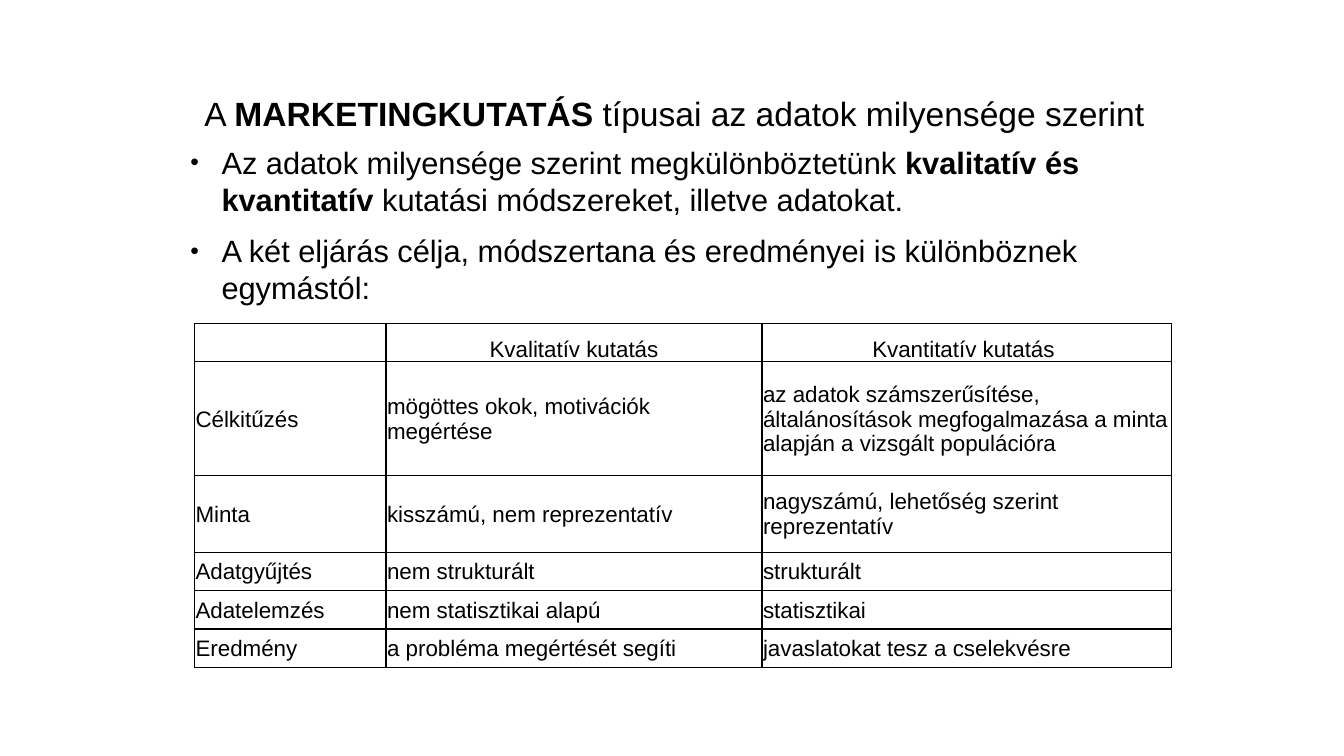
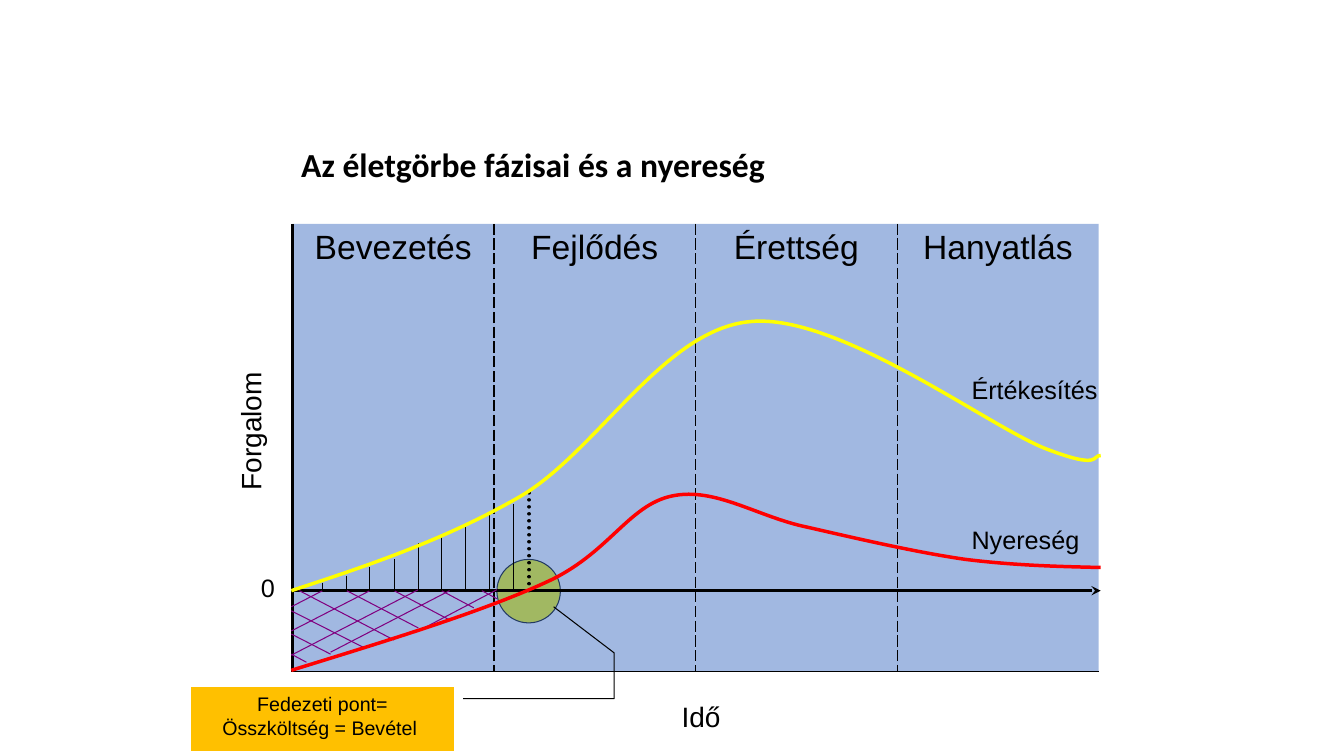
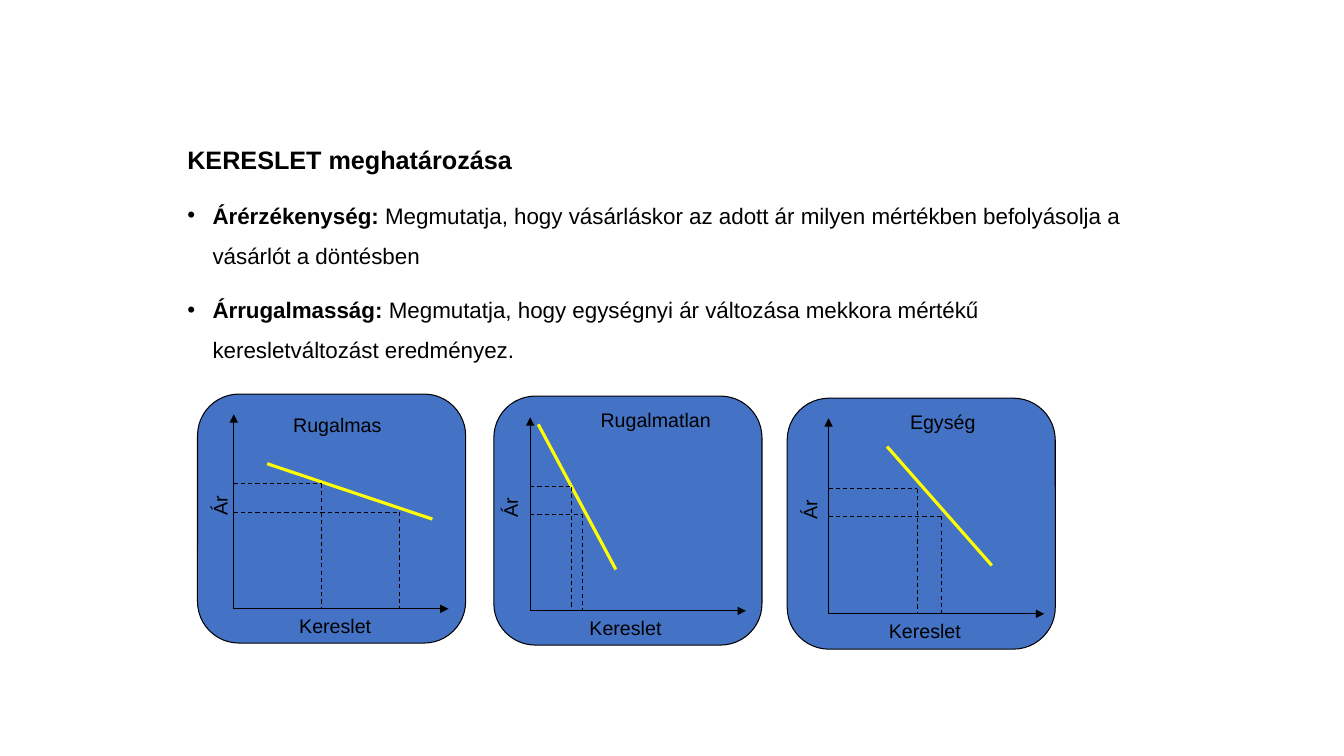
from lxml import etree
from pptx import Presentation
from pptx import util as u
from pptx.dml.color import RGBColor
from pptx.enum import dml, shapes, text
from pptx.oxml import parse_xml
from pptx.oxml.ns import nsdecls, qn

PX = 9144  # one px is a hundredth of an inch
BLACK = RGBColor(0x00, 0x00, 0x00)
BLUE = RGBColor(0x44, 0x72, 0xC4)
YELLOW = RGBColor(0xFF, 0xFF, 0x00)
RED = RGBColor(0xFF, 0x00, 0x00)
PURPLE = RGBColor(0x80, 0x00, 0x80)
ORANGE = RGBColor(0xFF, 0xC0, 0x00)
LEFT, CENTER = text.PP_ALIGN.LEFT, text.PP_ALIGN.CENTER
DASH, DOT = dml.MSO_LINE.DASH, dml.MSO_LINE.ROUND_DOT


def add_text(holder, frame, lines, size, align=LEFT, rotation=0, face="Arial"):
    """Add a text box; parts between asterisks are bold."""
    box = holder.shapes.add_textbox(*[PX * n for n in frame])
    box.rotation = rotation
    box.text_frame.word_wrap = True
    for number, line in enumerate(lines):
        para = box.text_frame.paragraphs[0] if number == 0 else box.text_frame.add_paragraph()
        para.alignment = align
        for index, part in enumerate(line.split("*")):
            if part:
                span = para.add_run()
                span.text = part
                span.font.name, span.font.size = face, u.Pt(size)
                span.font.bold = index % 2 == 1
                span.font.color.rgb = BLACK
    return box


def add_line(holder, start, end, color=BLACK, width=0.75, dash=None, arrow=None):
    line = holder.shapes.add_connector(
        shapes.MSO_CONNECTOR.STRAIGHT, *[PX * n for n in (*start, *end)])
    line.line.color.rgb = color
    line.line.width = u.Pt(width)
    if dash:
        line.line.dash_style = dash
    if dash == DOT:
        line.line._get_or_add_ln().set("cap", "rnd")
    if arrow:
        etree.SubElement(line.line._get_or_add_ln(), qn("a:tailEnd"), type=arrow)
    etree.SubElement(line._element.spPr, qn("a:effectLst"))


deck = Presentation()
deck.slide_width, deck.slide_height = u.Inches(40 / 3), u.Inches(7.5)
research, lifecycle, demand = [deck.slides.add_slide(deck.slide_layouts[6]) for _ in range(3)]
bulleted = []  # paragraph, indent in px, bullet size in percent
bordered = []  # cell, {side: (width in points, dash)}

# Slide 1: heading and bullets
heading = add_text(research, (193, 92, 961, 611),
                   ["A *MARKETINGKUTATÁS* típusai az adatok milyensége szerint"], 24)
heading.text_frame.paragraphs[0].line_spacing = 0.9
intro = add_text(research, (179, 137, 1040, 172), [
    "Az adatok milyensége szerint megkülönböztetünk *kvalitatív és kvantitatív *"
    "kutatási módszereket, illetve adatokat.",
    "A két eljárás célja, módszertana és eredményei is különböznek egymástól:"], 22)
intro.text_frame.vertical_anchor = text.MSO_ANCHOR.MIDDLE
for para in intro.text_frame.paragraphs:
    para.space_after = u.Pt(6)
    bulleted.append((para, 31, 80))
intro.text_frame.paragraphs[1].space_before = u.Pt(4.4)

# Slide 1: comparison table
comparison = [
    ("", "Kvalitatív kutatás", "Kvantitatív kutatás "),
    ("Célkitűzés", "mögöttes okok, motivációk megértése",
     "az adatok számszerűsítése, általánosítások megfogalmazása a minta alapján "
     "a vizsgált populációra"),
    ("Minta", "kisszámú, nem reprezentatív", "nagyszámú, lehetőség szerint reprezentatív"),
    ("Adatgyűjtés", "nem strukturált", "strukturált"),
    ("Adatelemzés", "nem statisztikai alapú", "statisztikai"),
    ("Eredmény", "a probléma megértését segíti", "javaslatokat tesz a cselekvésre"),
]
table = research.shapes.add_table(6, 3, *[PX * n for n in (193, 321, 969, 342)]).table
table.first_row = table.horz_banding = False
for column, width in zip(table.columns, (190, 373, 406)):
    column.width = PX * width
for row, height, words in zip(table.rows, (38, 113, 76, 38, 38, 38), comparison):
    row.height = PX * height
    is_header = words is comparison[0]
    for cell, word in zip(row.cells, words):
        cell.fill.background()
        cell.margin_left = cell.margin_right = cell.margin_top = PX
        cell.margin_bottom = 0
        cell.vertical_anchor = text.MSO_ANCHOR.BOTTOM if is_header else text.MSO_ANCHOR.MIDDLE
        para = cell.text_frame.paragraphs[0]
        para.text = word
        para.alignment = CENTER if is_header else LEFT
        for span in para.runs:
            span.font.name, span.font.size = "Arial", u.Pt(16)
            span.font.color.rgb = BLACK
        bordered.append((cell, dict.fromkeys("LRTB", (1, "solid"))))

# Slide 2: break-even circle behind the phases
circle = lifecycle.shapes.add_shape(
    shapes.MSO_SHAPE.OVAL, *[PX * n for n in (493, 555, 63, 63)])
circle.shadow.inherit = False
circle.fill.solid()
circle.fill.fore_color.rgb = YELLOW
circle.line.color.rgb = BLACK
circle.line.width = u.Pt(0.75)

# Slide 2: half-transparent phase columns
phases = ["Bevezetés", "Fejlődés", "Érettség", "Hanyatlás"]
table = lifecycle.shapes.add_table(1, 4, *[PX * n for n in (290, 222, 800, 444)]).table
table.first_row = table.horz_banding = False
for cell, phase in zip(table.rows[0].cells, phases):
    cell.fill.solid()
    cell.fill.fore_color.rgb = BLUE
    color = cell._tc.tcPr.find(".//" + qn("a:srgbClr"))
    etree.SubElement(color, qn("a:alpha"), val="50000")
    para = cell.text_frame.paragraphs[0]
    para.text = phase
    para.alignment = CENTER
    para.runs[0].font.name, para.runs[0].font.size = "Arial", u.Pt(24)
    para.runs[0].font.color.rgb = BLACK
    edges = {"L": (1, "lgDash"), "R": (1, "lgDash"), "B": (1, "solid")}
    if phase == phases[0]:
        edges["L"] = (2.25, "solid")
    if phase == phases[-1]:
        del edges["R"]
    bordered.append((cell, edges))

# Slide 2: axis and break-even marker
AXIS = 586
add_line(lifecycle, (289, AXIS), (1092, AXIS), width=2.25, arrow="stealth")
add_line(lifecycle, (525, AXIS), (525, 484), width=2.5, dash=DOT)

# Slide 2: hatching of loss (falling, then rising) and of revenue (upright)
loss_hatch = [
    (289, 649, 304, 657), (289, 629, 328, 649), (289, 606, 360, 642), (297, 586, 391, 635),
    (344, 586, 415, 623), (391, 586, 446, 615), (438, 586, 470, 603), (478, 586, 493, 594),
    (320, 586, 289, 602), (367, 586, 289, 626), (415, 585, 289, 650), (446, 586, 328, 647),
    (493, 585, 415, 626),
]
for x1, y1, x2, y2 in loss_hatch:
    add_line(lifecycle, (x1, y1), (x2, y2), PURPLE)
for index, top in enumerate((578, 571, 563, 555, 539, 531, 523, 508, 500)):
    x = 320 + round(index * 23.65)
    add_line(lifecycle, (x, top), (x, AXIS))

# Slide 2: sales and profit as Bézier chains, three points per piece after the start
sales = [(289, 586), (365, 561), (441, 536), (517, 492), (593, 447), (659, 326), (745, 319),
         (832, 311), (979, 422), (1037, 445), (1094, 467), (1083, 451), (1092, 452)]
profit = [(289, 665), (383, 636), (478, 607), (541, 578), (604, 550), (623, 501), (667, 492),
          (710, 483), (752, 513), (801, 523), (849, 534), (909, 548), (958, 555),
          (1007, 561), (1049, 562), (1092, 563)]
for chain, color in ((sales, YELLOW), (profit, RED)):
    builder = lifecycle.shapes.build_freeform(*chain[0], scale=PX)
    builder.add_line_segments(chain[1:], close=False)
    curve = builder.convert_to_shape()
    segments = list(curve._element.iter(qn("a:lnTo")))
    for first in range(0, len(segments), 3):
        bend = etree.Element(qn("a:cubicBezTo"))
        segments[first].addprevious(bend)
        for segment in segments[first:first + 3]:
            bend.append(segment[0])
            segment.getparent().remove(segment)
    curve.shadow.inherit = False
    curve.fill.background()
    curve.line.color.rgb = color
    curve.line.width = u.Pt(2.5)

# Slide 2: callout
callout = lifecycle.shapes.add_shape(
    shapes.MSO_SHAPE.LINE_CALLOUT_3_NO_BORDER, *[PX * n for n in (190, 682, 260, 63)])
for index, value in enumerate((0.176, 1.037, 0.176, 1.613, -0.544, 1.613, -1.27, 1.382)):
    callout.adjustments[index] = value
callout.shadow.inherit = False
callout.fill.solid()
callout.fill.fore_color.rgb = ORANGE
callout.line.color.rgb = BLACK
callout.line.width = u.Pt(0.75)
callout.text_frame.text = "Fedezeti pont=\nÖsszköltség = Bevétel "
callout.text_frame.vertical_anchor = text.MSO_ANCHOR.TOP
for para in callout.text_frame.paragraphs:
    para.alignment = CENTER
    para.runs[0].font.name, para.runs[0].font.size = "Arial", u.Pt(14)
    para.runs[0].font.color.rgb = BLACK

# Slide 2: title and labels
title = add_text(lifecycle, (289, 138, 485, 50), ["*Az életgörbe fázisai és a nyereség*"], 24,
                 face="Calibri")
title.text_frame.word_wrap = False
title.text_frame.auto_size = text.MSO_AUTO_SIZE.SHAPE_TO_FIT_TEXT
add_text(lifecycle, (86, 402, 325, 44), ["Forgalom "], 20, CENTER, 270)
add_text(lifecycle, (454, 689, 483, 44), ["Idő"], 20, CENTER)
for label, x, y, width in (("0", 249, 563, 55), ("Nyereség", 954, 515, 177),
                           ("Értékesítés", 954, 366, 177)):
    add_text(lifecycle, (x, y, width, 40), [label], 18)

# Slide 3: heading and definitions
body = add_text(demand, (176, 126, 961, 543), ["*KERESLET meghatározása*"], 18)
body.text_frame.paragraphs[0].line_spacing = 1.4
definitions = [
    ("Árérzékenység: ", "Megmutatja, hogy vásárláskor az adott ár milyen mértékben "
     "befolyásolja a vásárlót a döntésben"),
    ("Árrugalmasság: ", "Megmutatja, hogy egységnyi ár változása mekkora mértékű "
     "keresletváltozást eredményez."),
]
for definition in definitions:
    para = body.text_frame.add_paragraph()
    para.line_spacing = 1.5
    para.space_before = u.Pt(10)
    for part in definition:
        span = para.add_run()
        span.text = part
        span.font.name, span.font.size = "Arial", u.Pt(16)
        span.font.bold = part is definition[0]
        span.font.color.rgb = BLACK
    bulleted.append((para, 25, 100))

# Slide 3: one panel per kind of elasticity, measured from the chart origin
# name, origin, panel frame, axis lengths, demand line, quantities, prices, name place,
# price and quantity label x
panels = [
    ("Rugalmas", (232, 604), (196, 391, 266, 247), (213, 193), (33, -144, 197, -89),
     (87, 164), (124, 96), (49, -199), -34, 55),
    ("Rugalmatlan", (526, 606), (490, 393, 266, 247), (214, 192), (8, -185, 85, -41),
     (41, 52), (123, 96), (60, -206), -40, 49),
    ("Egység", (822, 609), (781, 395, 266, 249), (214, 194), (58, -166, 162, -48),
     (88, 112), (124, 97), (71, -207), -39, 50),
]
for (name, (x, y), frame, (across, up), (x1, y1, x2, y2), quantities, prices,
     (dx, dy), price_x, quantity_x) in panels:
    group = demand.shapes.add_group_shape()
    panel = group.shapes.add_shape(
        shapes.MSO_SHAPE.ROUNDED_RECTANGLE, *[PX * n for n in frame])
    panel.shadow.inherit = False
    panel.fill.solid()
    panel.fill.fore_color.rgb = BLUE
    panel.line.color.rgb = BLACK
    panel.line.width = u.Pt(0.75)
    for end in ((x, y - up), (x + across, y)):
        add_line(group, (x, y), end, arrow="triangle")
    add_line(group, (x + x1, y + y1), (x + x2, y + y2), YELLOW, 2.25)
    for quantity, price in zip(quantities, prices):
        corner = (x + quantity, y - price)
        add_line(group, (x, y - price), corner, dash=DASH)
        add_line(group, corner, (x + quantity, y), dash=DASH)
    add_text(group, (x + dx, y + dy, 143, 34), [name], 14)
    add_text(group, (x + price_x, y - prices[1] - 24, 41, 34), ["Ár"], 14, rotation=270)
    add_text(group, (x + quantity_x, y, 110, 34), ["Kereslet"], 14)

# Bullets
for para, indent, percent in bulleted:
    props = para._p.get_or_add_pPr()
    props.set("marL", str(PX * indent))
    props.set("indent", str(-PX * indent))
    etree.SubElement(props, qn("a:buSzPct"), val=str(percent * 1000))
    etree.SubElement(props, qn("a:buFont"), typeface="Arial")
    etree.SubElement(props, qn("a:buChar"), char="•")

# Cell borders stand before the fill
for cell, edges in bordered:
    for place, side in enumerate("LRTB"):
        if side in edges:
            width, dash = edges[side]
            paint = (f'<a:solidFill><a:srgbClr val="{BLACK}"/></a:solidFill>'
                     f'<a:prstDash val="{dash}"/>')
        else:
            width, paint = 0, "<a:noFill/>"
        border = parse_xml(
            f'<a:ln{side} {nsdecls("a")} w="{u.Pt(width)}">{paint}</a:ln{side}>')
        cell._tc.get_or_add_tcPr().insert(place, border)

deck.save("out.pptx")
